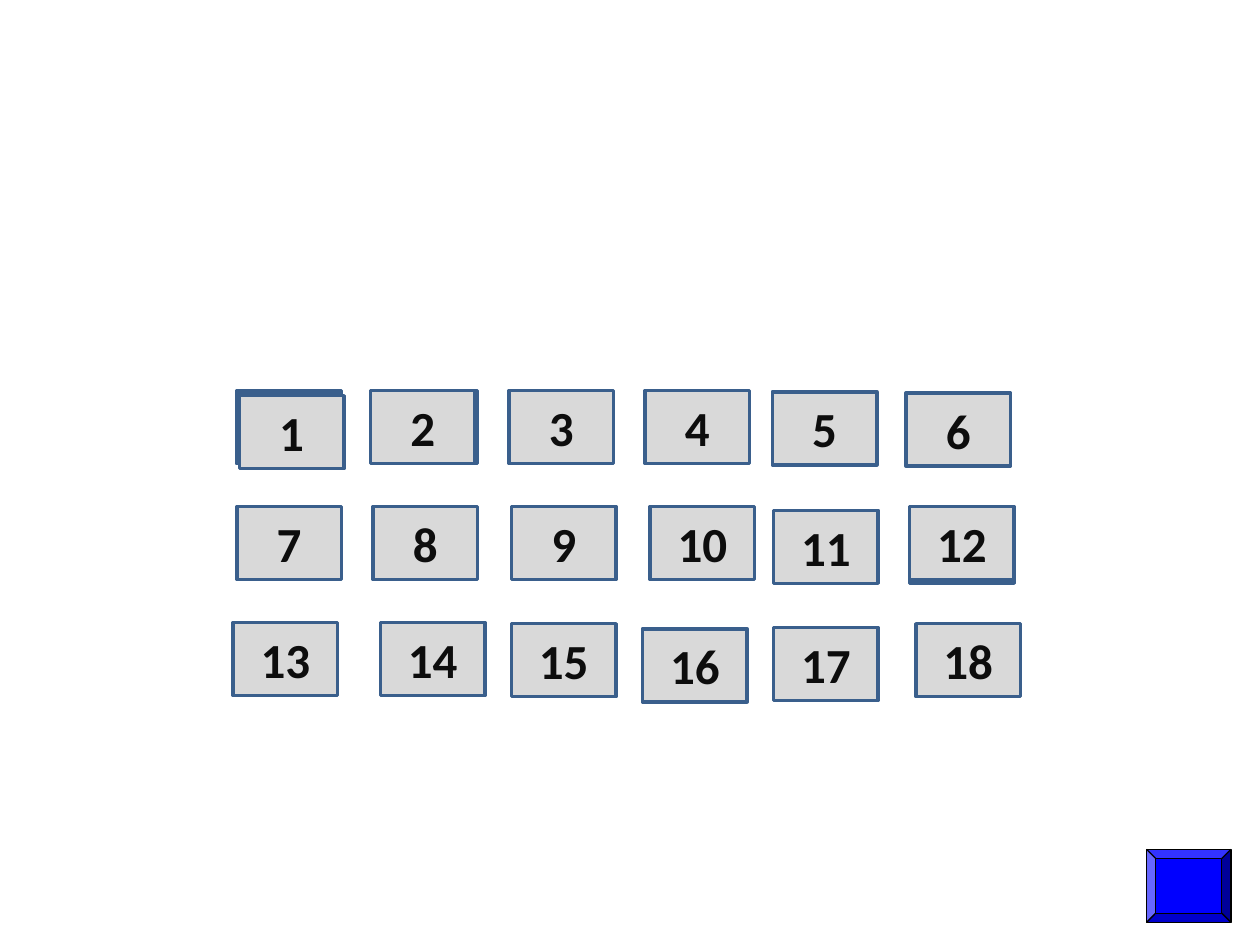
from pptx import Presentation
from pptx import util as u
from pptx.dml.color import RGBColor
from pptx.enum import shapes, text

GRAY = RGBColor(0xD9, 0xD9, 0xD9)
EDGE = RGBColor(0x3A, 0x5F, 0x8C)
INK = RGBColor(0x0D, 0x0D, 0x0D)
BLUE = RGBColor(0x00, 0x00, 0xFF)
BLACK = RGBColor(0x00, 0x00, 0x00)

COLUMNS = 6
LEFT, TOP = 1.88, 3.1
COLUMN_STEP, ROW_STEP = 1.08, 0.92
CARD_WIDTH, CARD_HEIGHT = 0.83, 0.58

RIMS = [(1, 0, 0), (2, 0, 0), (12, -0.06, 0.03)]
CARD_NUDGES = [
    (0.02, 0.04), (-0.02, 0), (0, 0), (0, 0), (-0.07, 0.01), (-0.09, 0.02),
    (0, 0), (0, 0), (0.02, 0), (0.04, 0), (-0.06, 0.03), (-0.06, 0),
    (-0.03, 0), (0.06, 0), (0.02, 0.01), (-0.02, 0.05), (-0.06, 0.04), (-0.01, 0.01),
]


def add_box(s, kind, x, y, width, height, fill, line, weight):
    sp = s.shapes.add_shape(kind, *map(u.Inches, (x, y, width, height)))
    sp.shadow.inherit = False
    sp.fill.solid()
    sp.fill.fore_color.rgb = fill
    sp.line.color.rgb = line
    sp.line.width = u.Pt(weight)
    return sp


def add_tile(s, number, dx, dy, fill):
    row, column = divmod(number - 1, COLUMNS)
    return add_box(s, shapes.MSO_SHAPE.RECTANGLE,
                   LEFT + column * COLUMN_STEP + dx, TOP + row * ROW_STEP + dy,
                   CARD_WIDTH, CARD_HEIGHT, fill, EDGE, 2)


def add_card(s, number, dx, dy):
    tf = add_tile(s, number, dx, dy, GRAY).text_frame
    tf.vertical_anchor = text.MSO_ANCHOR.MIDDLE
    p = tf.paragraphs[0]
    p.text = str(number)
    p.alignment = text.PP_ALIGN.CENTER
    p.font.name = "Calibri"
    p.font.size = u.Pt(28)
    p.font.bold = True
    p.font.color.rgb = INK


def add_button(s):
    sp = add_box(s, shapes.MSO_SHAPE.BEVEL, 9.1, 6.74, 0.67, 0.58, BLUE, BLACK, 0.75)
    sp.adjustments[0] = 0.125


def main():
    prs = Presentation()
    prs.slide_width, prs.slide_height = u.Inches(10), u.Inches(7.5)
    s = prs.slides.add_slide(prs.slide_layouts[6])
    for number, dx, dy in RIMS:
        add_tile(s, number, dx, dy, EDGE)
    for number, (dx, dy) in enumerate(CARD_NUDGES, start=1):
        add_card(s, number, dx, dy)
    add_button(s)
    prs.save("out.pptx")


if __name__ == "__main__":
    main()
